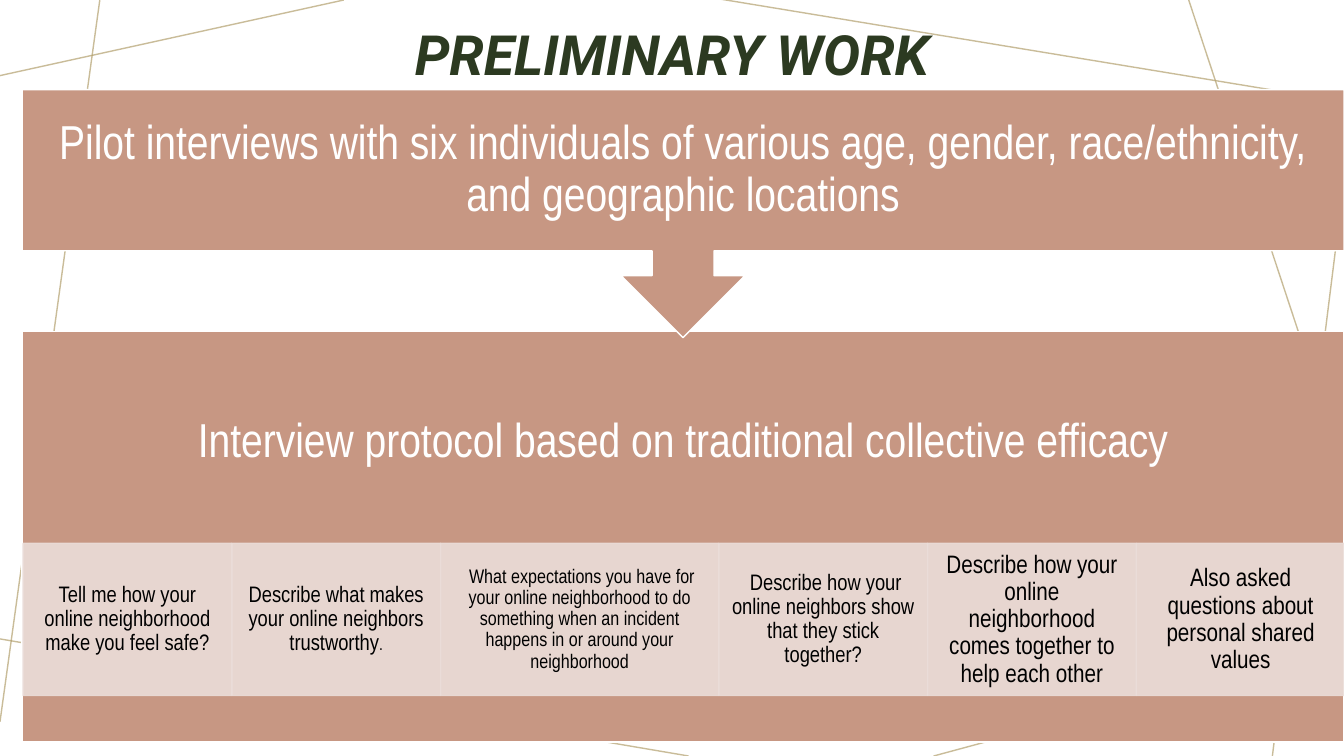
"""Build the Preliminary Work slide: pilot interviews leading to an interview protocol."""
import pptx
import pptx.dml.color
import pptx.enum.shapes
import pptx.enum.text
import pptx.oxml
import pptx.oxml.ns
import pptx.util
from dataclasses import dataclass

Inches = pptx.util.Inches
MSO_SHAPE = pptx.enum.shapes.MSO_SHAPE


@dataclass(frozen=True)
class Theme:
    """Colours, fonts and type sizes of the slide."""
    title_ink: str = "2C3A21"
    white: str = "FFFFFF"
    black: str = "000000"
    clay: str = "C79783"
    blush: str = "EBDDD9"
    gold: str = "B3A06E"
    title_font: str = "Roboto"
    body_font: str = "Arial Narrow"
    title_size: float = 39.6
    step_size: float = 34


THEME = Theme()


def set_text(frame, runs, font, color, insets):
    """Fill a frame with one centred paragraph of (text, size) runs."""
    frame.word_wrap = True
    frame.auto_size = pptx.enum.text.MSO_AUTO_SIZE.NONE
    frame.vertical_anchor = pptx.enum.text.MSO_ANCHOR.MIDDLE
    (frame.margin_left, frame.margin_top,
     frame.margin_right, frame.margin_bottom) = map(Inches, insets)
    paragraph = frame.paragraphs[0]
    paragraph.alignment = pptx.enum.text.PP_ALIGN.CENTER
    paragraph.line_spacing = 0.9
    for text, size in runs:
        run = paragraph.add_run()
        run.text = text
        run.font.name = font
        run.font.size = pptx.util.Pt(size)
        run.font.color.rgb = pptx.dml.color.RGBColor.from_string(color)


def set_opacity(item, percent):
    """Make the fill and line colours of an item partly transparent."""
    for color in item._element.spPr.iter(pptx.oxml.ns.qn("a:srgbClr")):
        alpha = pptx.oxml.parse_xml(f'<a:alpha {pptx.oxml.ns.nsdecls("a")} val="{percent * 1000}"/>')
        color.append(alpha)


deck = pptx.Presentation()
deck.slide_width, deck.slide_height = Inches(13.33), Inches(7.5)
slide = deck.slides.add_slide(deck.slide_layouts[5])
shapes = slide.shapes

background_lines = [
    (3.41, 0, 0, 0.75),
    (0.99, 0, 0, 7.16),
    (6.83, 7.5, -0.05, 6.33),
    (13.33, 6.4, 9.26, 7.5),
    (13.33, 1.8, 12.62, 7.5),
    (13.33, 4.66, 11.79, 0),
    (13.33, 1.01, 7.14, -0.01),
]
for ends in background_lines:
    strand = shapes.add_connector(pptx.enum.shapes.MSO_CONNECTOR.STRAIGHT, *map(Inches, ends))
    strand.line.color.rgb = pptx.dml.color.RGBColor.from_string(THEME.gold)
    strand.line.width = pptx.util.Pt(1)
    set_opacity(strand, 70)
    strand._element.spPr.append(
        pptx.oxml.parse_xml(f'<a:effectLst {pptx.oxml.ns.nsdecls("a")}/>'))

title = shapes.title
title.left, title.top, title.width, title.height = map(Inches, (1.25, 0.26, 10.83, 0.62))
set_text(title.text_frame, [("PRELIMINARY WORK", THEME.title_size)],
         THEME.title_font, THEME.title_ink, (0.1, 0.05, 0.1, 0.05))
title_run_font = title.text_frame.paragraphs[0].runs[0].font
title_run_font.bold = title_run_font.italic = True
shapes._spTree.append(title._element)

steps = [
    (MSO_SHAPE.RECTANGLE, 3.29, 4.07, 2.13,
     "Interview protocol based on traditional collective efficacy"),
    (MSO_SHAPE.DOWN_ARROW_CALLOUT, 0.89, 2.46, 0.26,
     "Pilot interviews with six individuals of various age, gender, race/ethnicity, "
     "and geographic locations"),
]
questions = [
    (2.07, 0.12, [("Tell me how your online neighborhood make you feel safe?", 16)]),
    (2.07, 0.12, [("Describe what makes your online neighbors trustworthy", 16), (".", 12)]),
    (2.76, 0.1, [(" What expectations you have for your online neighborhood to do something "
                  "when an incident happens in or around your neighborhood", 14)]),
    (2.07, 0.12, [(" Describe how your online neighbors show that they stick together?", 16)]),
    (2.07, 0.14, [("Describe how your online neighborhood comes together to help each other", 18)]),
    (2.07, 0.14, [("Also asked questions about personal shared values", 18)]),
]

boxes = [
    (kind, (0.22, top, 13.11, height), THEME.clay, THEME.white, 100,
     [(text, THEME.step_size)], THEME.white, (0.26, 0.26, 0.26, bottom_inset))
    for kind, top, height, bottom_inset, text in steps
]
question_left = 0.23
for width, inset, runs in questions:
    boxes.append((MSO_SHAPE.RECTANGLE, (question_left, 5.39, width, 1.51), THEME.blush,
                  THEME.blush, 90, runs, THEME.black, (inset, 0.02, inset, 0.02)))
    question_left += width

for kind, place, fill, outline, opacity, runs, ink, insets in boxes:
    box = shapes.add_shape(kind, *map(Inches, place))
    box.shadow.inherit = False
    box.fill.solid()
    box.fill.fore_color.rgb = pptx.dml.color.RGBColor.from_string(fill)
    box.line.color.rgb = pptx.dml.color.RGBColor.from_string(outline)
    box.line.width = pptx.util.Pt(1)
    if opacity < 100:
        set_opacity(box, opacity)
    set_text(box.text_frame, runs, THEME.body_font, ink, insets)

deck.save("out.pptx")
